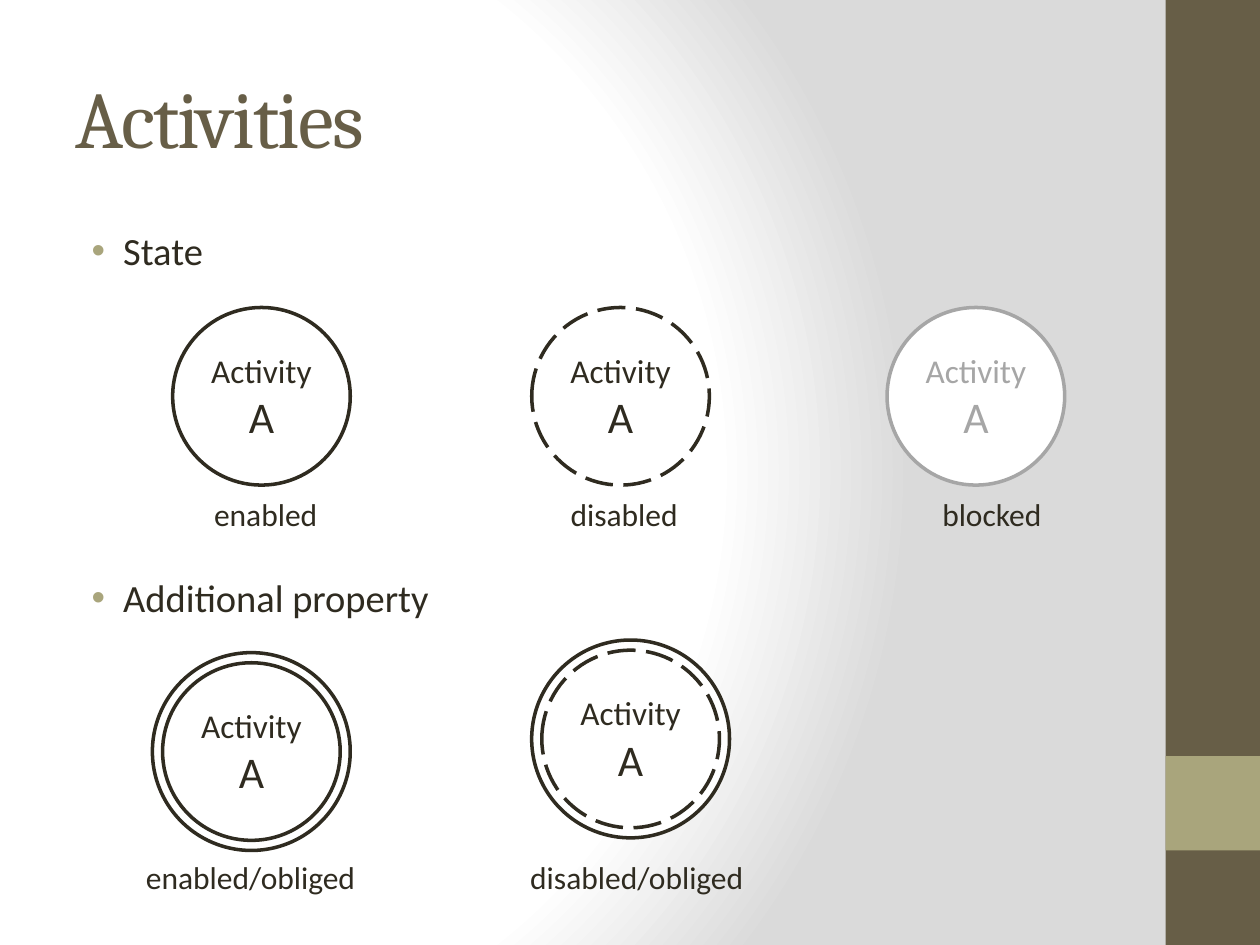
from dataclasses import dataclass

from lxml.etree import SubElement
from pptx import Presentation
from pptx.dml.color import RGBColor
from pptx.enum.dml import MSO_LINE
from pptx.enum.shapes import MSO_SHAPE
from pptx.enum.text import MSO_ANCHOR, PP_ALIGN
from pptx.oxml.ns import qn
from pptx.util import Inches, Pt


@dataclass(frozen=True)
class Theme:
    ink: str = "2F2B20"
    brown: str = "675E47"
    olive: str = "A9A57C"
    muted: str = "A6A6A6"
    white: str = "FFFFFF"
    shade: str = "DADADA"
    head: str = "Cambria"
    body: str = "Calibri"
    title: int = 46
    point: int = 22
    kind: int = 19
    name: int = 25
    label: int = 18
    line: int = 2


THEME = Theme()
DISC = 1.41
RING = 1.57


def put(target, values):
    for key, value in values.items():
        setattr(target, key, value)


def write(para, text, size, color=THEME.ink, face=THEME.body):
    run = para.add_run()
    run.text = text
    put(run.font, {"size": Pt(size), "name": face})
    run.font.color.rgb = RGBColor.from_string(color)
    return run


def add_node(parent, tag, **attrs):
    return SubElement(parent, qn(tag), attrs)


def paint_back(slide):
    """Fill the background with a circular gradient centred left of the middle."""
    slide.background.fill.gradient()
    grad = slide.element.find(".//" + qn("a:gradFill"))
    for child in list(grad):
        grad.remove(child)
    stops = add_node(grad, "a:gsLst")
    for pos, color in ((0, THEME.white), (75, THEME.white), (100, THEME.shade)):
        stop = add_node(stops, "a:gs", pos=str(pos * 1000))
        add_node(stop, "a:srgbClr", val=color)
    way = add_node(grad, "a:path", path="circle")
    add_node(way, "a:fillToRect", l="20000", t="50000", r="100000", b="50000")


def add_form(shapes, kind, left, top, width, height, fill):
    form = shapes.add_shape(
        kind, Inches(left), Inches(top), Inches(width), Inches(height))
    form.shadow.inherit = False
    form.fill.solid()
    form.fill.fore_color.rgb = RGBColor.from_string(fill)
    form.line.fill.background()
    return form


def add_disc(shapes, left, top, size, color=THEME.ink, dash=None):
    disc = add_form(shapes, MSO_SHAPE.OVAL, left, top, size, size, THEME.white)
    disc.line.color.rgb = RGBColor.from_string(color)
    put(disc.line, {"width": Pt(THEME.line), "dash_style": dash})
    return disc


def add_task(shapes, left, top, color=THEME.ink, dash=None):
    """Draw a disc that holds the activity name."""
    frame = add_disc(shapes, left, top, DISC, color, dash).text_frame
    put(frame, {"word_wrap": False, "vertical_anchor": MSO_ANCHOR.MIDDLE})
    first, second = frame.paragraphs[0], frame.add_paragraph()
    for para, text, size in ((first, "Activity", THEME.kind),
                             (second, "A", THEME.name)):
        para.alignment = PP_ALIGN.CENTER
        write(para, text, size, color)


def add_duty(slide, left, top, dash=None):
    """Group an activity with the outer ring that marks it as obliged."""
    group = slide.shapes.add_group_shape()
    gap = (RING - DISC) / 2
    add_disc(group.shapes, left, top, RING)
    add_task(group.shapes, left + gap, top + gap, dash=dash)


def add_box(slide, left, top, width, height):
    frame = slide.shapes.add_textbox(
        Inches(left), Inches(top), Inches(width), Inches(height)).text_frame
    frame.word_wrap = True
    return frame


def add_labels(slide, left, top, words, tabs):
    """Write a row of captions, each after the first at its own tab stop."""
    para = add_box(slide, left, top, 7.09, 0.4).paragraphs[0]
    write(para, "\t".join(words), THEME.label)
    stops = add_node(para._p.get_or_add_pPr(), "a:tabLst")
    for tab in tabs:
        add_node(stops, "a:tab", pos=str(Inches(tab)), algn="l")


def add_point(para, text, before=0):
    write(para, text, THEME.point)
    para.space_before = Pt(before)
    props = para._p.get_or_add_pPr()
    props.set("marL", str(Inches(0.38)))
    props.set("indent", str(Inches(-0.25)))
    add_node(add_node(props, "a:buClr"), "a:srgbClr", val=THEME.olive)
    add_node(props, "a:buFont", typeface="Arial")
    add_node(props, "a:buChar", char="•")


def set_title(slide, text):
    title = slide.shapes.title
    put(title, {"left": Inches(0.5), "top": Inches(0.3),
                "width": Inches(8.33), "height": Inches(1.25)})
    title.text_frame.vertical_anchor = MSO_ANCHOR.MIDDLE
    para = title.text_frame.paragraphs[0]
    para.alignment = PP_ALIGN.LEFT
    run = write(para, text, THEME.title, THEME.brown, THEME.head)
    run.font._element.set("spc", "-100")


def main():
    deck = Presentation()
    put(deck, {"slide_width": Inches(10), "slide_height": Inches(7.5)})
    slide = deck.slides.add_slide(deck.slide_layouts[5])
    paint_back(slide)
    for top, height, fill in ((0, 7.5, THEME.brown), (6, 0.75, THEME.olive)):
        add_form(slide.shapes, MSO_SHAPE.RECTANGLE, 9.25, top, 0.75, height, fill)
    set_title(slide, "Activities")

    points = add_box(slide, 0.5, 1.75, 8.33, 5.25)
    add_point(points.paragraphs[0], "State")
    add_point(points.add_paragraph(), "Additional property", before=172)

    dash = MSO_LINE.LONG_DASH
    for left, color, style in ((1.37, THEME.ink, None),
                               (4.22, THEME.ink, dash),
                               (7.04, THEME.muted, None)):
        add_task(slide.shapes, left, 2.44, color, style)
    add_duty(slide, 1.21, 5.18)
    add_duty(slide, 4.22, 5.08, dash)

    add_labels(slide, 1.6, 3.88, ("enabled", "disabled", "blocked"), (2.83, 5.78))
    add_labels(slide, 1.06, 6.76, ("enabled/obliged", "disabled/obliged"), (3.05,))
    deck.save("out.pptx")


if __name__ == "__main__":
    main()
